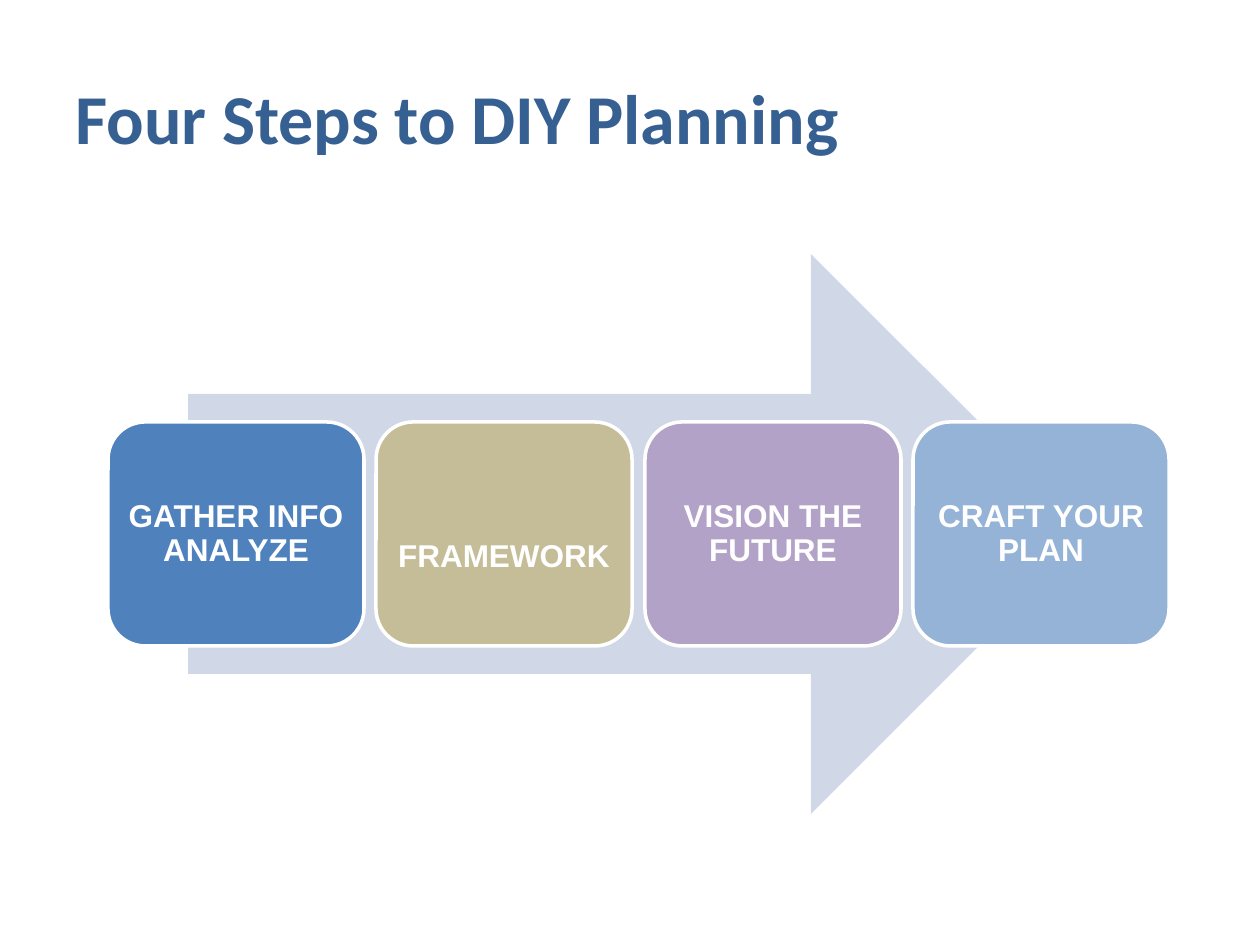
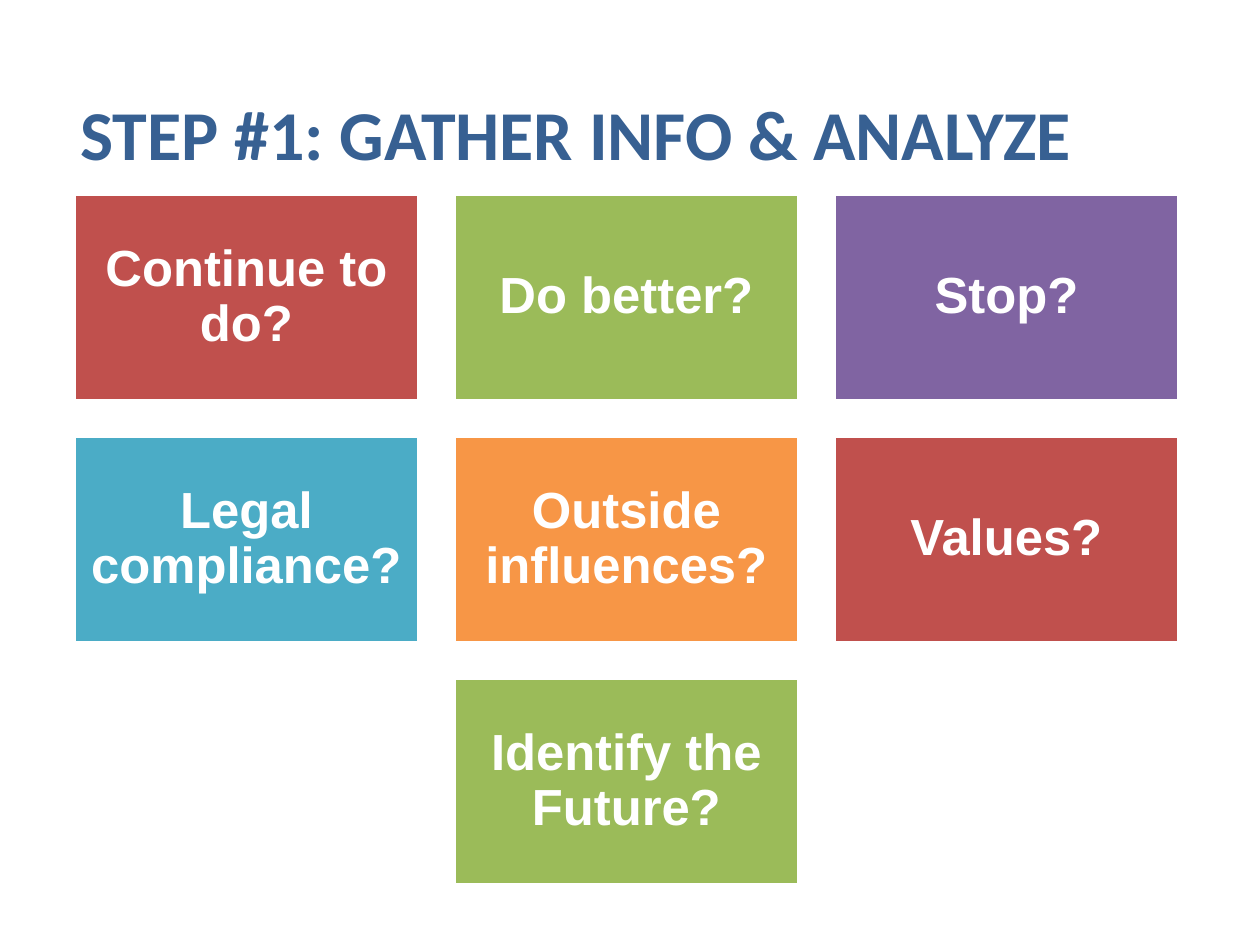
from dataclasses import dataclass

from pptx import Presentation
from pptx import util as u
from pptx.dml.color import RGBColor
from pptx.enum import shapes, text

EMU_PER_PX = 914400 / 126
WHITE, TITLE_BLUE, ARROW_BLUE = "FFFFFF", "376092", "D0D8E8"
RED, GREEN, ORANGE = "C0504D", "9BBB59", "F79646"
PURPLE, AQUA = "8064A2", "4BACC6"


@dataclass(frozen=True)
class Area:
    left: int
    top: int
    width: int
    height: int


@dataclass(frozen=True)
class Card:
    label: str
    fill: str
    drop: int = 0  # extra inset that lowers the label


@dataclass(frozen=True)
class CardStyle:
    kind: shapes.MSO_SHAPE
    size: int
    inset: int


STEP_STYLE = CardStyle(shapes.MSO_SHAPE.ROUNDED_RECTANGLE, 18, 8)
QUESTION_STYLE = CardStyle(shapes.MSO_SHAPE.RECTANGLE, 29, 15)

STEPS = [
    Card("GATHER INFO ANALYZE", "4F81BD"),
    Card("FRAMEWORK", "C4BD97", drop=46),
    Card("VISION THE FUTURE", "B3A2C7"),
    Card("CRAFT YOUR PLAN", "95B3D7"),
]
QUESTION_ROWS = [
    [Card("Continue to do?", RED), Card("Do better?", GREEN), Card("Stop?", PURPLE)],
    [Card("Legal compliance?", AQUA), Card("Outside influences?", ORANGE), Card("Values?", RED)],
    [Card("Identify the Future?", GREEN)],
]


def px(length: float) -> u.Emu:
    return u.Emu(round(length * EMU_PER_PX))


def colour(hex_code: str) -> RGBColor:
    return RGBColor.from_string(hex_code)


def place(area: Area) -> list[u.Emu]:
    return [px(side) for side in (area.left, area.top, area.width, area.height)]


def write(box, words: str, font_name: str, size: int, ink: str):
    """Fill a box with one bold, vertically centred paragraph."""
    frame = box.text_frame
    frame.text = words
    frame.word_wrap = True
    frame.vertical_anchor = text.MSO_ANCHOR.MIDDLE
    para = frame.paragraphs[0]
    for span in para.runs:
        span.font.name = font_name
        span.font.size = u.Pt(size)
        span.font.bold = True
        span.font.color.rgb = colour(ink)
    return para


def add_title(page, words: str, area: Area) -> None:
    box = page.shapes.add_textbox(*place(area))
    write(box, words, "Calibri", 40, TITLE_BLUE)


def add_solid(page, kind: shapes.MSO_SHAPE, area: Area, fill: str):
    shape = page.shapes.add_shape(kind, *place(area))
    shape.shadow.inherit = False
    shape.fill.solid()
    shape.fill.fore_color.rgb = colour(fill)
    shape.line.fill.background()
    return shape


def add_card(page, card: Card, style: CardStyle, area: Area) -> None:
    shape = add_solid(page, style.kind, area, card.fill)
    shape.line.color.rgb = colour(WHITE)
    shape.line.width = u.Pt(2)
    para = write(shape, card.label, "Arial", style.size, WHITE)
    para.alignment = text.PP_ALIGN.CENTER
    para.line_spacing = 0.9
    frame = shape.text_frame
    frame.margin_left = frame.margin_right = frame.margin_bottom = px(style.inset)
    frame.margin_top = px(style.inset + card.drop)


def build_steps(page) -> None:
    add_title(page, "Four Steps to DIY Planning", Area(63, 38, 1134, 158))
    add_solid(page, shapes.MSO_SHAPE.RIGHT_ARROW, Area(188, 254, 903, 560), ARROW_BLUE)
    # Cards spread evenly between the left and right edges
    left, right, width = 108, 1169, 256
    pitch = (right - left - width) / (len(STEPS) - 1)
    for index, step in enumerate(STEPS):
        add_card(page, step, STEP_STYLE, Area(left + round(index * pitch), 422, width, 224))


def build_questions(page) -> None:
    add_title(page, "STEP #1: GATHER INFO & ANALYZE", Area(68, 71, 1144, 123))
    # Each row is centred on the middle column
    middle, top, width, height, gap = 626, 194, 345, 207, 35
    for row, cards in enumerate(QUESTION_ROWS):
        row_width = len(cards) * (width + gap) - gap
        for column, card in enumerate(cards):
            left = middle - row_width // 2 + column * (width + gap)
            area = Area(left, top + row * (height + gap), width, height)
            add_card(page, card, QUESTION_STYLE, area)


def main() -> None:
    deck = Presentation()
    deck.slide_width, deck.slide_height = px(1260), px(945)
    blank = deck.slide_layouts[6]
    for build in (build_steps, build_questions):
        build(deck.slides.add_slide(blank))
    deck.save("out.pptx")


if __name__ == "__main__":
    main()
